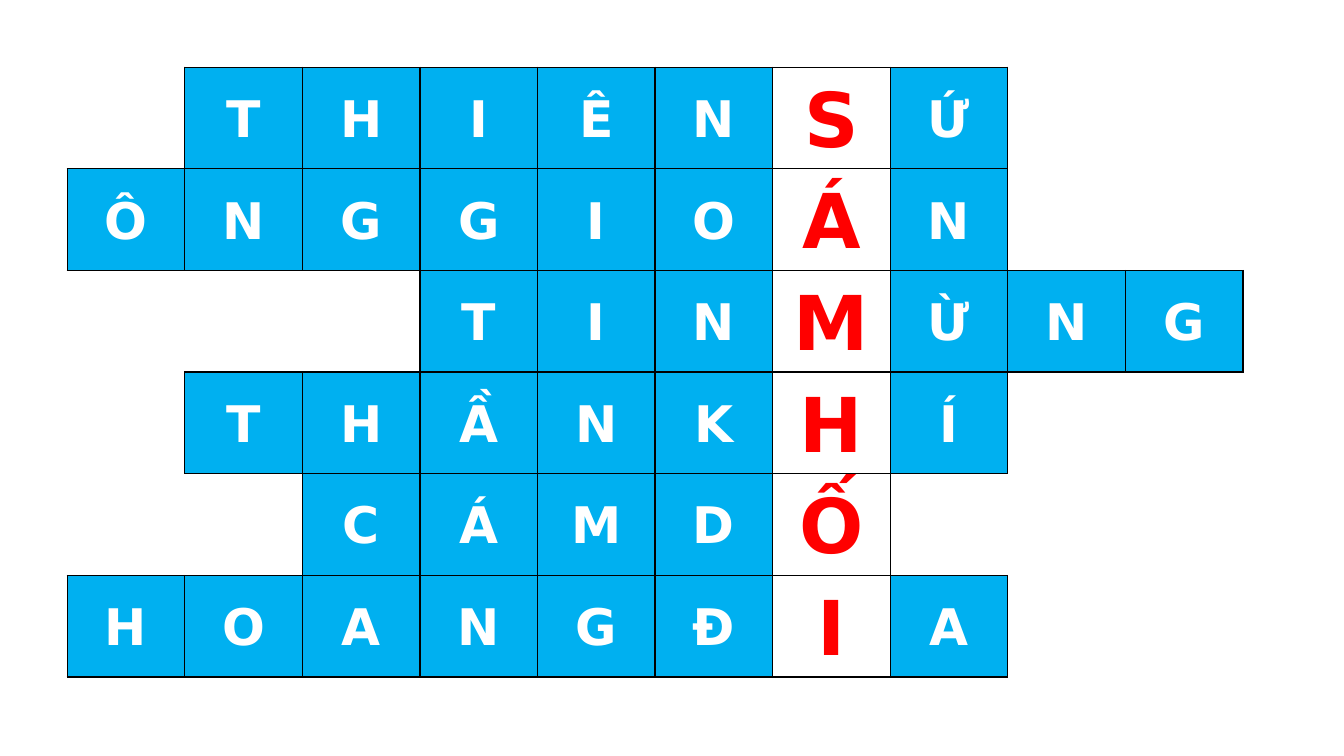
import pptx
import pptx.dml.color
import pptx.enum.text
import pptx.oxml
import pptx.oxml.ns
import pptx.util

COLORS = {"tile": "00B0F0", "letter": "FFFFFF", "key_tile": "FFFFFF",
          "key_letter": "FF0000", "border": "000000"}
FONT = "DejaVu Sans"
NO_STYLE = "{2D5ABB26-0587-4C30-8999-92F81FD0307C}"
KEY_COL = 6
# One string per answer; a space is an empty square.
ANSWERS = [" THIÊNSỨ  ",
           "ÔNGGIOÁN  ",
           "   TINMỪNG",
           " THẦNKHÍ  ",
           "  CÁMDỐ   ",
           "HOANGĐIA  "]
ROWS, COLS = len(ANSWERS), len(ANSWERS[0])
SIDES = {"L": (0, -1), "R": (0, 1), "T": (-1, 0), "B": (1, 0)}
CELL_FORMAT = {"margin_left": pptx.util.Inches(0.07), "margin_right": pptx.util.Inches(0.07),
               "margin_top": 0, "margin_bottom": 0,
               "vertical_anchor": pptx.enum.text.MSO_ANCHOR.MIDDLE}
PARAGRAPH_FORMAT = {"alignment": pptx.enum.text.PP_ALIGN.CENTER,
                    "line_spacing": 1.07, "space_after": pptx.util.Pt(8)}


def has_letter(row, col):
    return 0 <= row < ROWS and 0 <= col < COLS and ANSWERS[row][col] != " "


def set_border(cell, index, side, visible):
    """Put one side's line into the cell, ahead of its fill."""
    fill = (f'<a:solidFill><a:srgbClr val="{COLORS["border"]}"/></a:solidFill>'
            if visible else "<a:noFill/>")
    line = pptx.oxml.parse_xml(
        f'<a:ln{side} {pptx.oxml.ns.nsdecls("a")} w="{pptx.util.Pt(1)}">{fill}</a:ln{side}>')
    cell._tc.get_or_add_tcPr().insert(index, line)


prs = pptx.Presentation()
prs.slide_width = pptx.util.Inches(13.33)
prs.slide_height = pptx.util.Inches(7.5)
s = prs.slides.add_slide(prs.slide_layouts[6])

margin = int(prs.slide_width * 0.05)
width = prs.slide_width * 0.875
height = pptx.util.Inches(6.05)
frame = s.shapes.add_table(ROWS, COLS, margin, margin, int(width), height)
table = frame.table
table.first_row = table.horz_banding = False
table._tbl.tblPr.find(pptx.oxml.ns.qn("a:tableStyleId")).text = NO_STYLE

for row, answer in enumerate(ANSWERS):
    for col, letter in enumerate(answer):
        cell = table.cell(row, col)
        filled = has_letter(row, col)
        if filled:
            key = "key_" if col == KEY_COL else ""
            cell.fill.solid()
            cell.fill.fore_color.rgb = pptx.dml.color.RGBColor.from_string(COLORS[key + "tile"])
            for name, value in CELL_FORMAT.items():
                setattr(cell, name, value)
            p = cell.text_frame.paragraphs[0]
            for name, value in PARAGRAPH_FORMAT.items():
                setattr(p, name, value)
            r = p.add_run()
            r.text = letter
            font_format = {"name": FONT, "bold": True,
                           "size": pptx.util.Pt(54 if key else 36)}
            for name, value in font_format.items():
                setattr(r.font, name, value)
            r.font.color.rgb = pptx.dml.color.RGBColor.from_string(COLORS[key + "letter"])
        else:
            cell.fill.background()
        for index, (side, (down, right)) in enumerate(SIDES.items()):
            set_border(cell, index, side, filled or has_letter(row + down, col + right))

prs.save("out.pptx")
